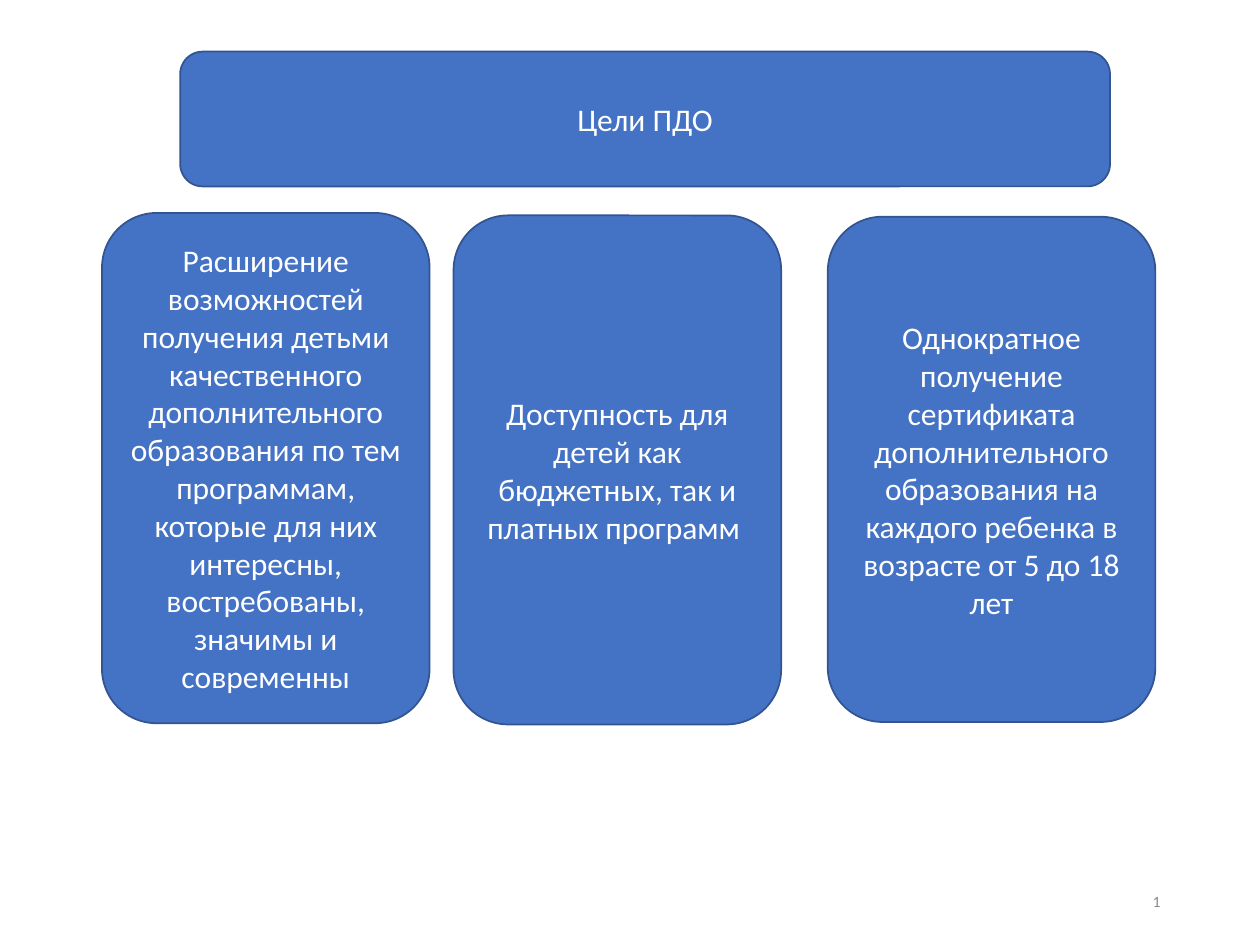
import pptx
import pptx.util
import pptx.dml.color
import pptx.enum.shapes
import pptx.enum.text

COLOURS = {"fill": "4472C4", "line": "325491", "light": "FFFFFF", "number": "8C8C8C"}
ALIGN = pptx.enum.text.PP_ALIGN
COLUMNS, ROWS = 100, 75  # grid over the whole slide


def colour(name):
    return pptx.dml.color.RGBColor.from_string(COLOURS[name])


def write_text(box, text, size=18, tint="light", align=ALIGN.CENTER, font="Calibri"):
    frame = box.text_frame
    frame.word_wrap = True
    frame.vertical_anchor = pptx.enum.text.MSO_ANCHOR.MIDDLE
    para = frame.paragraphs[0]
    para.alignment = align
    span = para.add_run()
    span.text = text
    span.font.name = font
    span.font.size = pptx.util.Pt(size)
    span.font.color.rgb = colour(tint)


class SlideBuilder:
    def __init__(self, deck):
        self.deck = deck
        self.page = deck.slides.add_slide(deck.slide_layouts[6])

    def place(self, left, top, width, height):
        """Turn grid columns and rows into slide lengths."""
        across = self.deck.slide_width / COLUMNS
        down = self.deck.slide_height / ROWS
        return (round(left * across), round(top * down),
                round(width * across), round(height * down))

    def card(self, text, *area):
        box = self.page.shapes.add_shape(
            pptx.enum.shapes.MSO_SHAPE.ROUNDED_RECTANGLE, *self.place(*area))
        box.shadow.inherit = False
        box.fill.solid()
        box.fill.fore_color.rgb = colour("fill")
        box.line.color.rgb = colour("line")
        box.line.width = pptx.util.Pt(1)
        write_text(box, text)

    def label(self, text, *area, **style):
        box = self.page.shapes.add_textbox(*self.place(*area))
        write_text(box, text, **style)


def main():
    deck = pptx.Presentation()
    deck.slide_width = pptx.util.Inches(10)
    deck.slide_height = pptx.util.Inches(7.5)
    slide = SlideBuilder(deck)

    # Heading
    slide.card("Цели ПДО", 14.3, 4.1, 73.8, 10.7)

    # Goals: left, top, height, text
    goals = [
        (8.1, 16.9, 40.5,
         "Расширение возможностей получения детьми качественного "
         "дополнительного образования по тем программам, которые для них "
         "интересны, востребованы, значимы и современны"),
        (36, 17.1, 40.4,
         "Доступность для детей как бюджетных, так и платных программ "),
        (65.7, 17.2, 40.1,
         "Однократное получение сертификата дополнительного образования "
         "на каждого ребенка в возрасте от 5 до 18 лет"),
    ]
    goal_width = 26
    for left, top, height, text in goals:
        slide.card(text, left, top, goal_width, height)

    # Page number
    slide.label("1", 70.6, 69.5, 22.5, 4, size=9, tint="number", align=ALIGN.RIGHT)

    deck.save("out.pptx")


if __name__ == "__main__":
    main()
